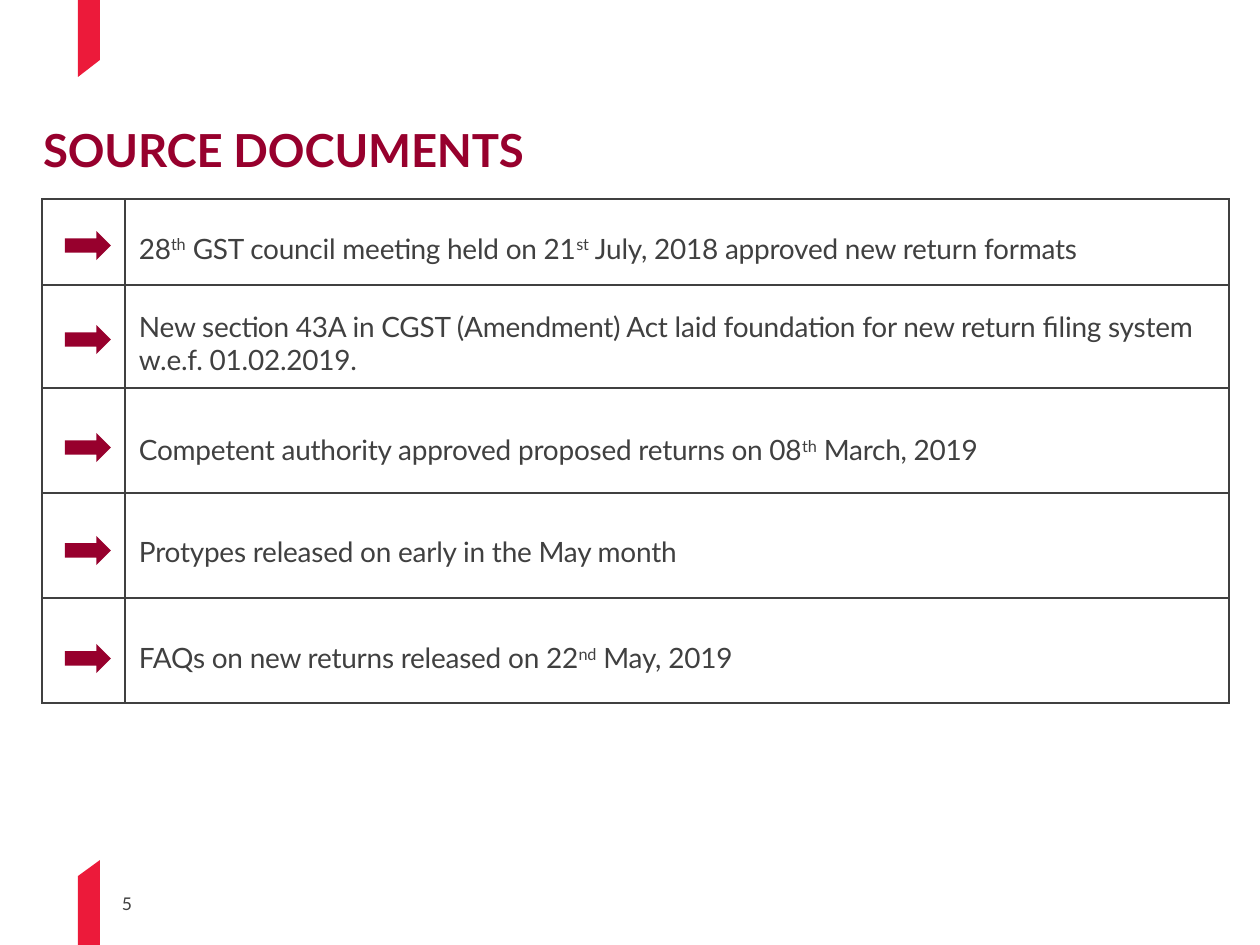
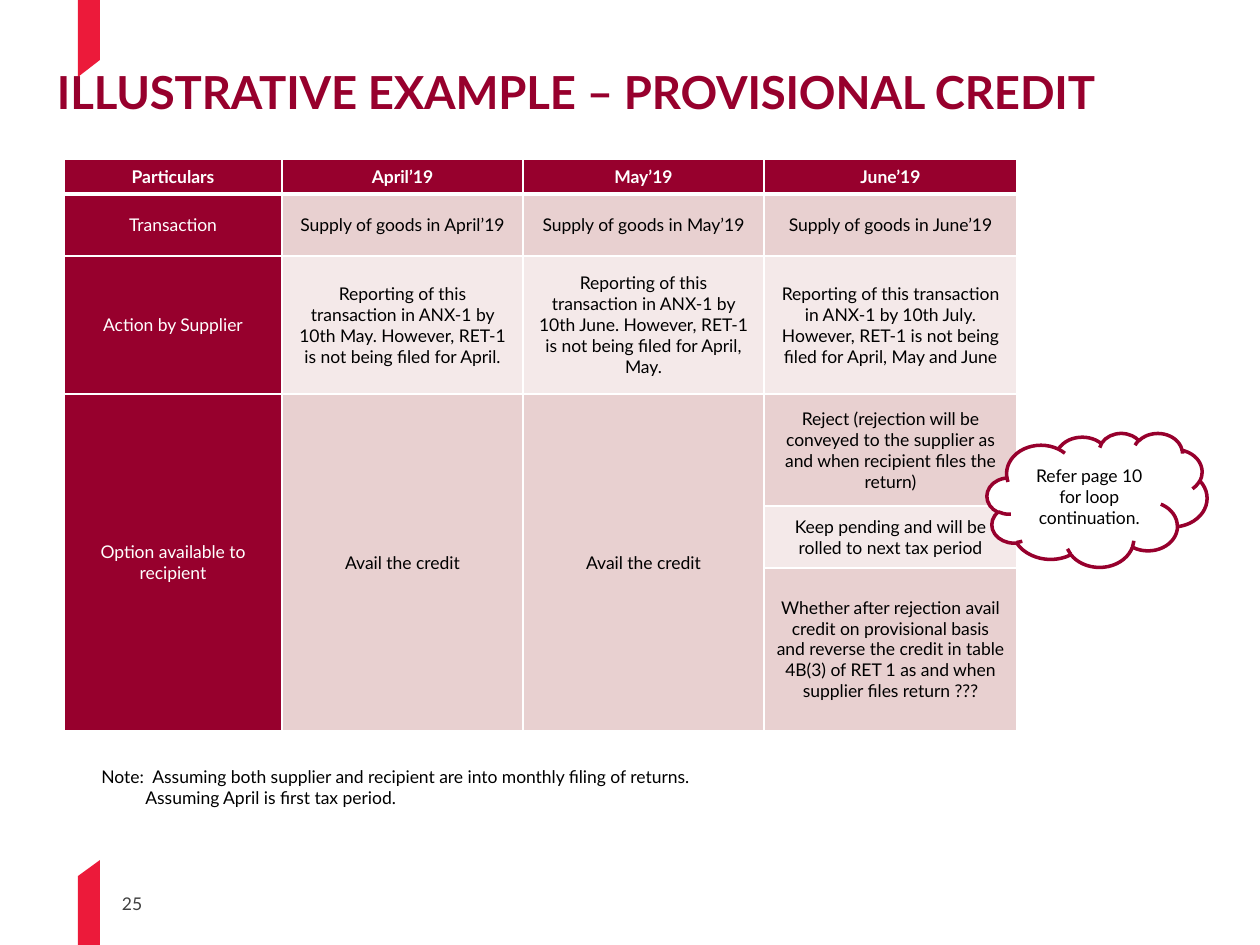
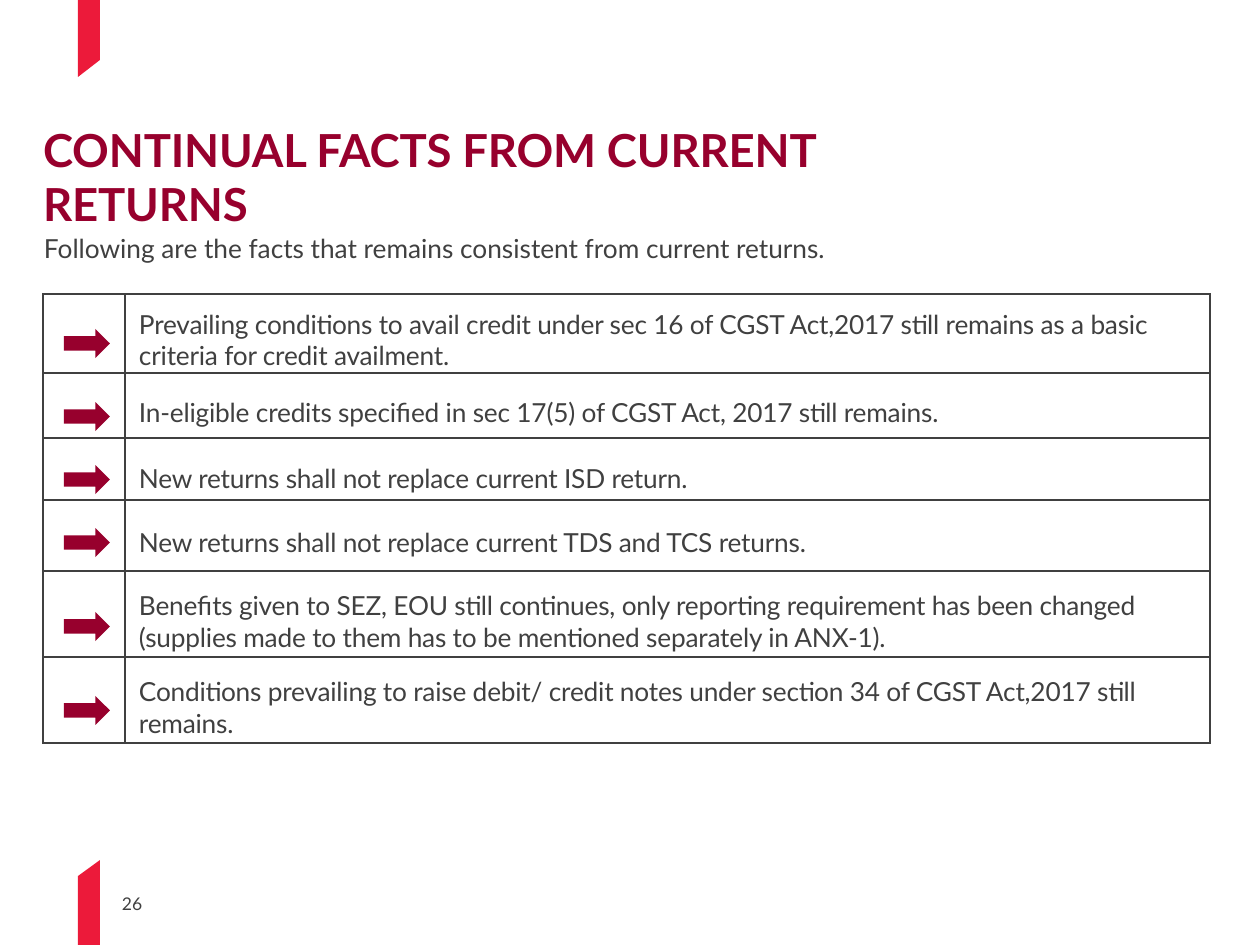
from typing import NamedTuple

from lxml.etree import SubElement
from pptx import Presentation
from pptx.dml.color import RGBColor
from pptx.enum.shapes import MSO_SHAPE as Preset
from pptx.enum.text import MSO_ANCHOR as Anchor, PP_ALIGN as Align
from pptx.oxml.ns import qn
from pptx.util import Emu, Pt

PX_PER_INCH = 126
FONT = "Lato"
MAROON = RGBColor(0x97, 0x00, 0x2D)
RED = RGBColor(0xEC, 0x1A, 0x3A)
GREY = RGBColor(0x40, 0x40, 0x40)
BLACK = RGBColor(0x00, 0x00, 0x00)
WHITE = RGBColor(0xFF, 0xFF, 0xFF)
ROSE = RGBColor(0xE8, 0xD0, 0xD0)
BLUSH = RGBColor(0xF4, 0xE9, 0xE9)

TITLE = {"size": Pt(26), "bold": True}
SMALL = {"size": Pt(10), "bold": False}
HEADING = {"size": Pt(10), "bold": True}
TIGHT = -10

BANDS = (
    ((78, 0), (100, 0), (100, 60), (78, 77)),
    ((100, 860), (78, 876), (78, 945), (100, 945)),
)


class Point(NamedTuple):
    """One row of an arrow list, with lengths in px."""
    height: int
    arrow_top: int
    inset_top: int
    text: str


SOURCES = (
    Point(86, 231, 13, "28^th^ GST council meeting held on 21^st^ July, 2018 approved new return formats"),
    Point(103, 325, 13, "New section 43A in CGST (Amendment) Act laid foundation for new return "
                        "filing system w.e.f. 01.02.2019."),
    Point(105, 433, 19, "Competent authority approved proposed returns on 08^th^ March, 2019"),
    Point(105, 536, 13, "Protypes released on early in the May month"),
    Point(105, 644, 15, "FAQs on new returns released on 22^nd^ May, 2019"),
)

FACTS = (
    Point(79, 329, 13, "Prevailing conditions to avail credit under sec 16 of CGST Act,2017 still "
                       "remains as a basic criteria for credit availment."),
    Point(65, 402, 13, "In-eligible credits specified in sec 17(5) of CGST Act, 2017 still remains."),
    Point(62, 465, 19, "New returns shall not replace current ISD return."),
    Point(71, 528, 13, "New returns shall not replace current TDS and TCS returns."),
    Point(86, 612, 15, "Benefits given to SEZ, EOU still continues, only reporting requirement has been "
                       "changed (supplies made to them has to be mentioned separately in ANX-1)."),
    Point(86, 696, 15, "Conditions prevailing to raise debit/ credit notes under section 34 of CGST "
                       "Act,2017 still remains."),
)

CREDIT_COLUMNS = (218, 241, 241, 253)
CREDIT_HEIGHTS = (35, 62, 138, 112, 62, 163)
CREDIT_ROWS = (
    ("Particulars", "April’19", "May’19", "June’19"),
    ("Transaction", "Supply of goods in April’19", "Supply of goods in May’19",
     "Supply of goods in June’19"),
    ("Action by Supplier",
     "Reporting of this transaction in ANX-1 by 10th May. However, RET-1 is not being filed for April.",
     "Reporting of this transaction in ANX-1 by 10th June. However, RET-1 is not being filed for April, May.",
     "Reporting of this transaction in ANX-1 by 10th July. However, RET-1 is not being filed for April, "
     "May and June"),
    ("Option available to recipient", "Avail the credit", "Avail the credit",
     "Reject (rejection will be conveyed to the supplier as and when recipient files the return)"),
    ("", "", "", "Keep pending and will be rolled to next tax period"),
    ("", "", "", "Whether after rejection avail credit on provisional basis and reverse the credit in "
                 "table 4B(3) of RET 1 as and when supplier files return ???"),
)


def px(length):
    """Turn whole px into EMU."""
    return Emu(round(length * 914400 / PX_PER_INCH))


def apply(target, values):
    """Set each named value on the target."""
    for name, value in values.items():
        setattr(target, name, value)


def insets(left=0, top=0):
    """Give margins with a left and top inset in px."""
    return {"margin_left": px(left), "margin_top": px(top), "margin_right": 0, "margin_bottom": 0}


def write(paragraph, text, style, color, spacing=0):
    """Add styled text, with parts between carets raised."""
    for index, part in enumerate(text.split("^")):
        run = paragraph.add_run()
        run.text = part
        apply(run.font, {"name": FONT, **style})
        run.font.color.rgb = color
        properties = run._r.get_or_add_rPr()
        if spacing:
            properties.set("spc", str(spacing))
        if index % 2:
            properties.set("baseline", "30000")


def add_text(slide, box, text, style, color, margins, spacing=0):
    """Add a wrapping text box and return its frame."""
    frame = slide.shapes.add_textbox(*map(px, box)).text_frame
    apply(frame, {"word_wrap": True, "vertical_anchor": Anchor.TOP, **margins})
    write(frame.paragraphs[0], text, style, color, spacing)
    return frame


def paint(shape, fill, line=None):
    """Fill a shape and give it an outline or none."""
    shape.shadow.inherit = False
    shape.fill.solid()
    shape.fill.fore_color.rgb = fill
    if line is None:
        shape.line.fill.background()
    else:
        shape.line.color.rgb = line
        shape.line.width = Pt(2)


def add_page(deck, number, title, title_box):
    """Add a slide with red bands, title and page number."""
    slide = deck.slides.add_slide(deck.slide_layouts[6])
    for start, *corners in BANDS:
        outline = slide.shapes.build_freeform(*start, scale=914400 / PX_PER_INCH)
        outline.add_line_segments(corners, close=True)
        paint(outline.convert_to_shape(), RED)
    add_text(slide, title_box, title, TITLE, MAROON, insets(1, 1), TIGHT)
    add_text(slide, (118, 893, 40, 24), str(number), SMALL, GREY, insets(4))
    return slide


def set_borders(cell, color, **widths):
    """Draw the four cell edges, 1 pt unless a width is named."""
    properties = cell._tc.get_or_add_tcPr()
    for side in "LRTB":
        edge = SubElement(properties, qn(f"a:ln{side}"), w=str(Pt(widths.get(side, 1))))
        SubElement(SubElement(edge, qn("a:solidFill")), qn("a:srgbClr"), val=str(color))


def add_grid(slide, left, top, columns, heights):
    """Add a plain table with the given column widths and row heights."""
    table = slide.shapes.add_table(
        len(heights), len(columns), *map(px, (left, top, sum(columns), sum(heights)))).table
    apply(table, {"first_row": False, "horz_banding": False})
    for column, width in zip(table.columns, columns):
        column.width = px(width)
    for row, height in zip(table.rows, heights):
        row.height = px(height)
    return table


def add_arrow_list(slide, left, top, columns, arrow_left, points, size):
    """Add a bordered table with an arrow before each point."""
    table = add_grid(slide, left, top, columns, [point.height for point in points])
    for cell in table.iter_cells():
        set_borders(cell, GREY)
        cell.fill.background()
    for index, point in enumerate(points):
        cell = table.cell(index, 1)
        apply(cell, {"vertical_anchor": Anchor.MIDDLE, **insets(14, point.inset_top)})
        write(cell.text_frame.paragraphs[0], point.text, {"size": Pt(size)}, GREY, TIGHT)
        arrow = slide.shapes.add_shape(
            Preset.RIGHT_ARROW, *map(px, (arrow_left, point.arrow_top, 46, 29)))
        paint(arrow, MAROON)


def add_credit_table(slide):
    """Add the month by month credit table."""
    table = add_grid(slide, 64, 159, CREDIT_COLUMNS, CREDIT_HEIGHTS)
    for row, texts in enumerate(CREDIT_ROWS):
        for column, text in enumerate(texts):
            cell = table.cell(row, column)
            label = row == 0 or column == 0
            set_borders(cell, WHITE, B=3 if row == 0 else 1, T=3 if row == 1 else 1)
            cell.fill.solid()
            cell.fill.fore_color.rgb = MAROON if label else ROSE if row % 2 else BLUSH
            cell.vertical_anchor = Anchor.MIDDLE
            if text:
                paragraph = cell.text_frame.paragraphs[0]
                paragraph.alignment = Align.CENTER
                write(paragraph, text, SMALL if row else HEADING, WHITE if label else BLACK)
    for column in range(3):
        table.cell(3, column).merge(table.cell(5, column))


def add_note(slide):
    """Add the two assumptions below the credit table."""
    frame = add_text(slide, (89, 760, 1142, 83), "Note:\tAssuming both supplier and recipient are "
                     "into monthly filing of returns.", SMALL, BLACK, {})
    tabs = SubElement(frame.paragraphs[0]._p.get_or_add_pPr(), qn("a:tabLst"))
    SubElement(tabs, qn("a:tab"), pos=str(px(51)), algn="l")
    second = frame.add_paragraph()
    second._p.get_or_add_pPr().set("marL", str(px(44)))
    write(second, "Assuming April is first tax period.", SMALL, BLACK)


def add_cloud(slide, box, text):
    """Add an outlined cloud with centred text."""
    cloud = slide.shapes.add_shape(Preset.CLOUD, *map(px, box))
    paint(cloud, WHITE, MAROON)
    apply(cloud.text_frame, {"word_wrap": True, "vertical_anchor": Anchor.MIDDLE})
    paragraph = cloud.text_frame.paragraphs[0]
    paragraph.alignment = Align.CENTER
    write(paragraph, text, SMALL, BLACK)


def main():
    """Build the three slides and save them."""
    deck = Presentation()
    apply(deck, {"slide_width": px(1260), "slide_height": px(945)})

    sources = add_page(deck, 5, "SOURCE DOCUMENTS", (42, 121, 987, 57))
    add_arrow_list(sources, 42, 199, (83, 1104), 65, SOURCES, 16)

    example = add_page(deck, 25, "ILLUSTRATIVE EXAMPLE – PROVISIONAL CREDIT", (56, 63, 1142, 57))
    add_note(example)
    add_credit_table(example)
    add_cloud(example, (987, 433, 220, 134), "Refer page 10 for loop continuation.")

    facts = add_page(deck, 26, "CONTINUAL FACTS FROM CURRENT RETURNS", (42, 121, 987, 112))
    add_text(facts, (43, 218, 1170, 47),
             "Following are the facts that remains consistent from current returns.",
             {"size": Pt(15)}, GREY, insets(1, 14))
    add_arrow_list(facts, 43, 294, (82, 1085), 64, FACTS, 15)

    deck.save("out.pptx")


if __name__ == "__main__":
    main()
